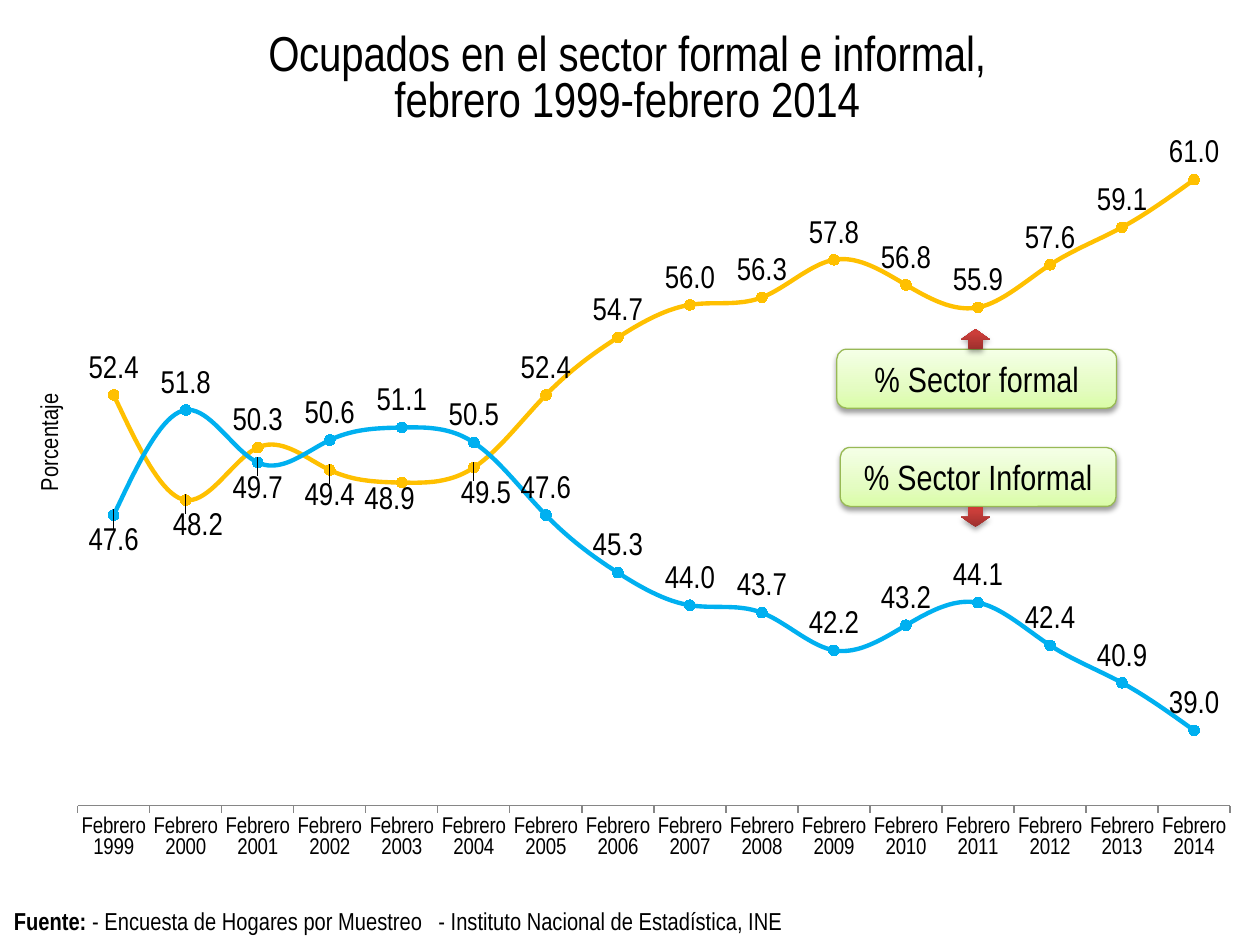
from lxml import etree
from pptx import Presentation
from pptx.chart.data import CategoryChartData
from pptx.dml.color import RGBColor
from pptx.enum.chart import (XL_CHART_TYPE, XL_LABEL_POSITION, XL_MARKER_STYLE,
                             XL_TICK_MARK)
from pptx.enum.shapes import MSO_SHAPE
from pptx.enum.text import MSO_ANCHOR, PP_ALIGN
from pptx.oxml import parse_xml
from pptx.oxml.ns import nsdecls, qn
from pptx.util import Cm, Pt

LINE = XL_CHART_TYPE.LINE_MARKERS
ABOVE = XL_LABEL_POSITION.ABOVE
DOT = XL_MARKER_STYLE.CIRCLE
OUT, NONE = XL_TICK_MARK.OUTSIDE, XL_TICK_MARK.NONE
ROUND, ARROW = MSO_SHAPE.ROUNDED_RECTANGLE, MSO_SHAPE.RIGHT_ARROW
MIDDLE, LEFT, CENTER = MSO_ANCHOR.MIDDLE, PP_ALIGN.LEFT, PP_ALIGN.CENTER

INK = {"text": "000000", "axis": "868686", "formal": "FFC000",
       "informal": "00B0F0", "edge": "98B955"}
GREEN = [(0, "DAFDA7"), (35, "E4FCC2"), (100, "F5FFE7")]
RED = [(0, "9C2F2D"), (80, "CB3E3A"), (100, "CE3B37")]

FORMAL = [52.4, 48.2, 50.3, 49.4, 48.9, 49.5, 52.4, 54.7,
          56.0, 56.3, 57.8, 56.8, 55.9, 57.6, 59.1, 61.0]
# The two shares add up to 100
INFORMAL = [round(100 - share, 1) for share in FORMAL]
# Label shifts by point, as parts of the chart's width and height
SHIFTS = [{1: (0.01, 0.06), 3: (0, 0.06), 4: (-0.01, 0.05), 5: (0.01, 0.06)},
          {0: (0, 0.06), 2: (0, 0.06), 6: (0, 0)}]


def color(name):
    return RGBColor.from_string(INK[name])


def style(font, size, bold=False):
    font.name, font.size, font.bold = "Arial Narrow", Pt(size), bold
    font.color.rgb = color("text")


def write(frame, *runs, size, bold=(), align=LEFT):
    """Fill the first paragraph with runs; bold holds the bold run numbers."""
    para = frame.paragraphs[0]
    para.alignment = align
    for num, text in enumerate(runs):
        run = para.add_run()
        run.text = text
        style(run.font, size, num in bold)
    return para


def place(host, index, **spots):
    """Give a chart part a manual layout."""
    for old in host.findall(qn("c:layout")):
        host.remove(old)
    tags = "".join(f'<c:{tag} val="{val}"/>' for tag, val in spots.items())
    host.insert(index, parse_xml(
        f'<c:layout {nsdecls("c")}><c:manualLayout>{tags}'
        '</c:manualLayout></c:layout>'))


class Deck:
    def __init__(self):
        self.file = Presentation()
        self.file.slide_width, self.file.slide_height = Cm(25.4), Cm(19.05)
        self.slide = self.file.slides.add_slide(self.file.slide_layouts[6])
        self.shapes = self.slide.shapes

    def chart(self, left, top, width, height):
        data = CategoryChartData(number_format="0.0")
        data.categories = [f"Febrero {year}" for year in range(1999, 2015)]
        data.add_series("Series 1", FORMAL)
        data.add_series("Series 2", INFORMAL)
        chart = self.shapes.add_chart(LINE, Cm(left), Cm(top), Cm(width),
                                      Cm(height), data).chart
        chart.has_legend = False
        chart.font.name, chart.font.size = "Calibri", Pt(10)
        chart.font.color.rgb = color("text")
        # Title
        frame = chart.chart_title.text_frame
        frame.text = ("Ocupados en el sector formal e informal,\n"
                      "febrero 1999-febrero 2014")
        for para in frame.paragraphs:
            style(para.runs[0].font, 28)
        place(chart.chart_title._element, 1,
              xMode="edge", yMode="edge", x=0.2, y=0.02)
        self.axes(chart)
        plot = chart.plots[0]
        plot.vary_by_categories = False
        place(chart._chartSpace.find(".//" + qn("c:plotArea")), 0,
              layoutTarget="inner", xMode="edge", yMode="edge",
              x=0.047, y=0.134, w=0.944, h=0.772)
        for line, name, shifts in zip(plot.series, ("formal", "informal"),
                                      SHIFTS):
            self.series(line, name, shifts)

    def axes(self, chart):
        cat, val = chart.category_axis, chart.value_axis
        cat.major_tick_mark, cat.minor_tick_mark = OUT, NONE
        cat.format.line.color.rgb = color("axis")
        style(cat.tick_labels.font, 13)
        val.minimum_scale, val.maximum_scale = 36, 63
        val.has_major_gridlines = False
        val.visible = False
        frame = val.axis_title.text_frame
        write(frame, "Porcentaje", size=14)
        body = frame._txBody.find(qn("a:bodyPr"))
        body.set("rot", "-5400000")
        body.set("vert", "horz")
        place(val.axis_title._element, 1,
              xMode="edge", yMode="edge", x=0.01, y=0.43)

    def series(self, line, name, shifts):
        line.smooth = True
        line.format.line.color.rgb = color(name)
        line.format.line.width = Pt(2.5)
        line.marker.style, line.marker.size = DOT, 6
        paint = line.marker.format
        paint.fill.solid()
        paint.fill.fore_color.rgb = color(name)
        paint.line.color.rgb = color(name)
        labels = line.data_labels
        labels.show_value, labels.position = True, ABOVE
        labels.number_format = "0.0"
        labels.number_format_is_linked = False
        style(labels.font, 18)
        for num, (right, down) in shifts.items():
            label = line.points[num].data_label
            style(label.font, 18)
            label.position = ABOVE
            item = labels._element.findall(qn("c:dLbl"))[-1]
            place(item, 1, x=right, y=down)

    def shape(self, kind, left, top, width, height, stops, shade):
        """Add a shape with an upward gradient and a soft shadow."""
        shape = self.shapes.add_shape(kind, Cm(left), Cm(top), Cm(width),
                                      Cm(height))
        shape.line.fill.background()
        marks = "".join(f'<a:gs pos="{pos * 1000}"><a:srgbClr val="{tone}"/>'
                        '</a:gs>' for pos, tone in stops)
        props = shape._element.spPr
        props.find(qn("a:prstGeom")).addnext(parse_xml(
            f'<a:gradFill {nsdecls("a")} rotWithShape="0"><a:gsLst>{marks}'
            '</a:gsLst><a:lin ang="16200000" scaled="0"/></a:gradFill>'))
        glow = etree.SubElement(props, qn("a:effectLst"))
        glow.append(parse_xml(
            f'<a:outerShdw {nsdecls("a")} blurRad="{Pt(3.1)}" '
            f'dist="{Pt(1.7)}" dir="5400000" rotWithShape="0">'
            f'<a:srgbClr val="000000"><a:alpha val="{shade * 1000}"/>'
            '</a:srgbClr></a:outerShdw>'))
        return shape

    def box(self, text, left, top, width):
        box = self.shape(ROUND, left, top, width, 1.19, GREEN, 38)
        box.line.color.rgb = color("edge")
        box.line.width = Pt(0.75)
        box.text_frame.vertical_anchor = MIDDLE
        write(box.text_frame, text, size=20, align=CENTER)

    def arrow(self, top, turn):
        self.shape(ARROW, 19.46, top, 0.41, 0.58, RED, 35).rotation = turn

    def source(self, left, top, width, height):
        frame = self.shapes.add_textbox(Cm(left), Cm(top), Cm(width),
                                        Cm(height)).text_frame
        frame.word_wrap = True
        frame.vertical_anchor = MIDDLE
        para = write(frame, "Fuente:", " - Encuesta de Hogares por Muestreo"
                     "\t- Instituto Nacional de Estadística, INE",
                     size=14, bold=(0,))
        tabs = etree.SubElement(para._p.get_or_add_pPr(), qn("a:tabLst"))
        etree.SubElement(tabs, qn("a:tab"), pos=str(Cm(8.56)), algn="l")


def main():
    deck = Deck()
    deck.chart(0.41, 0.25, 24.61, 17.65)
    deck.source(0.03, 18.14, 16.28, 0.84)
    # Keys with arrows towards their lines
    deck.box("% Sector formal", 16.87, 7.04, 5.64)
    deck.box("% Sector Informal", 16.94, 9.02, 5.56)
    deck.arrow(6.55, 270)
    deck.arrow(10.13, 90)
    deck.file.save("out.pptx")


if __name__ == "__main__":
    main()
